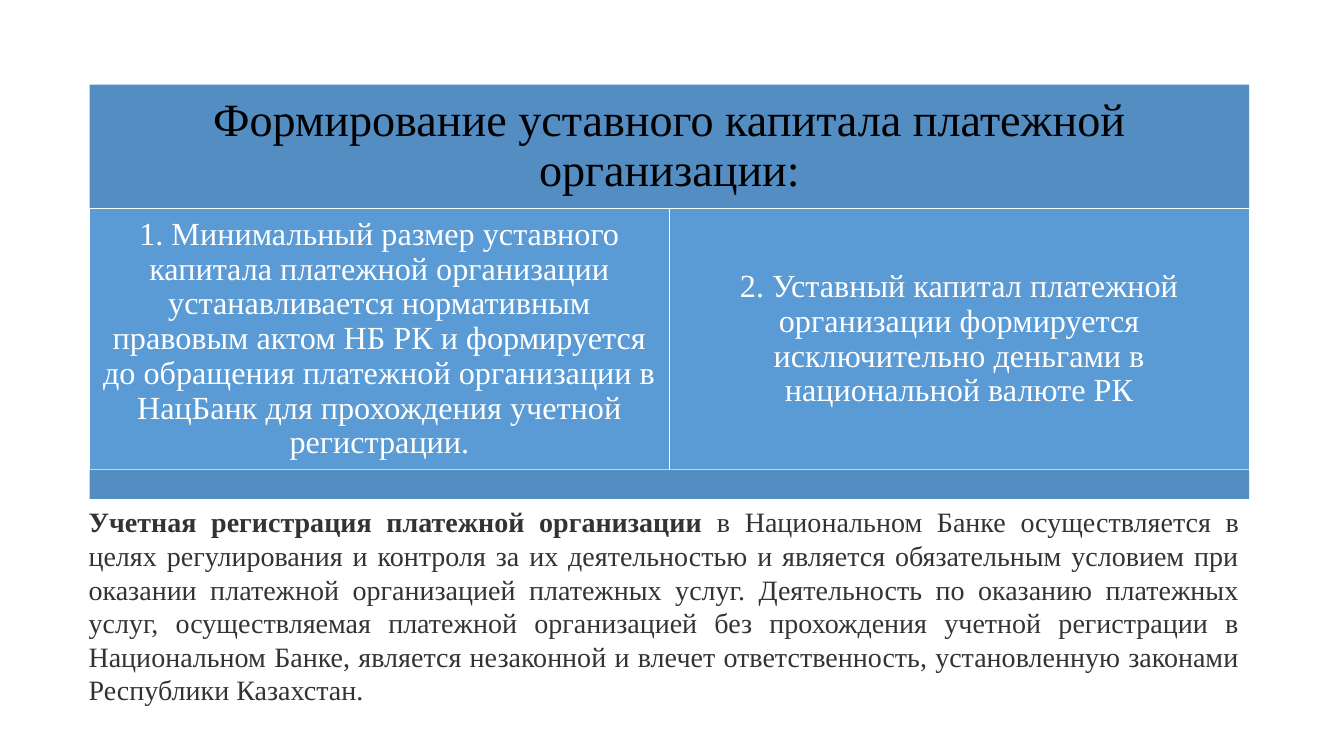
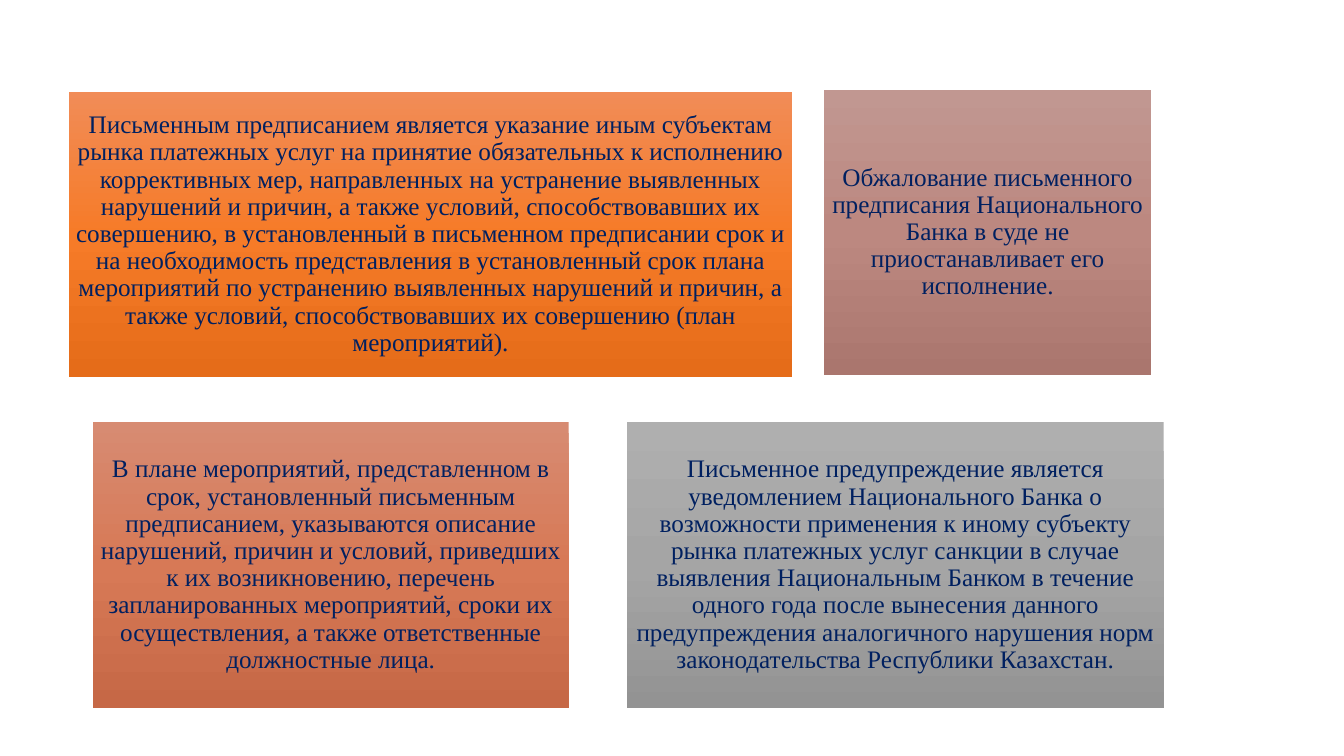
from copy import deepcopy
from dataclasses import dataclass

from pptx import Presentation
from pptx.dml.color import RGBColor
from pptx.enum.shapes import MSO_SHAPE as Preset
from pptx.enum.text import MSO_ANCHOR as Anchor, PP_ALIGN as Align
from pptx.oxml.ns import qn
from pptx.util import Inches, Pt


@dataclass(frozen=True)
class Theme:
    font: str = "Times New Roman"
    band: str = "538DC1"
    column: str = "5B9BD5"
    white: str = "FFFFFF"
    black: str = "000000"
    body: str = "333333"
    navy: str = "002060"
    title_size: int = 33
    column_size: int = 23
    body_size: int = 20
    card_size: int = 18
    tight: float = 0.9


@dataclass(frozen=True)
class Box:
    left: float
    top: float
    width: float
    height: float

    def lengths(self) -> tuple:
        return tuple(Inches(v) for v in (self.left, self.top, self.width, self.height))


@dataclass(frozen=True)
class Card:
    box: Box
    shades: tuple[str, str, str]
    text: str


THEME = Theme()

# Capital panel: a heading band, two columns and a base band
PANEL_LEFT, PANEL_TOP, PANEL_WIDTH = 0.89, 0.84, 11.5
HEADING_HEIGHT, COLUMN_HEIGHT, BASE_HEIGHT = 1.23, 2.59, 0.29
HEADING = "Формирование уставного капитала платежной организации:"
COLUMNS = (
    "1. Минимальный размер уставного капитала платежной организации устанавливается "
    "нормативным правовым актом НБ РК и формируется до обращения платежной организации "
    "в НацБанк для прохождения учетной регистрации.",
    "2. Уставный капитал платежной организации формируется исключительно деньгами "
    "в национальной валюте РК",
)
REGISTRATION_LEAD = "Учетная регистрация платежной организации"
REGISTRATION = (
    " в Национальном Банке осуществляется в целях регулирования и контроля за их "
    "деятельностью и является обязательным условием при оказании платежной организацией "
    "платежных услуг. Деятельность по оказанию платежных услуг, осуществляемая платежной "
    "организацией без прохождения учетной регистрации в Национальном Банке, является "
    "незаконной и влечет ответственность, установленную законами Республики Казахстан."
)

# Measures: four gradient cards of one height
CARD_HEIGHT, LOWER_TOP = 2.83, 4.19
CARDS = (
    Card(
        Box(0.68, 0.91, 7.18, CARD_HEIGHT), ("F18C57", "F67B28", "E56C19"),
        "Письменным предписанием является указание иным субъектам рынка платежных услуг "
        "на принятие обязательных к исполнению коррективных мер, направленных на устранение "
        "выявленных нарушений и причин, а также условий, способствовавших их совершению, "
        "в установленный в письменном предписании срок и на необходимость представления "
        "в установленный срок плана мероприятий по устранению выявленных нарушений и причин, "
        "а также условий, способствовавших их совершению (план мероприятий).",
    ),
    Card(
        Box(8.17, 0.89, 3.25, CARD_HEIGHT), ("C19791", "BC8880", "AA766E"),
        "Обжалование письменного предписания Национального Банка в суде "
        "не приостанавливает его исполнение.",
    ),
    Card(
        Box(0.92, LOWER_TOP, 4.72, CARD_HEIGHT), ("D78B72", "D77956", "C66846"),
        "В плане мероприятий, представленном в срок, установленный письменным предписанием, "
        "указываются описание нарушений, причин и условий, приведших к их возникновению, "
        "перечень запланированных мероприятий, сроки их осуществления, а также ответственные "
        "должностные лица.",
    ),
    Card(
        Box(6.22, LOWER_TOP, 5.32, CARD_HEIGHT), ("AFAFAF", "A5A5A5", "939393"),
        "Письменное предупреждение является уведомлением Национального Банка о возможности "
        "применения к иному субъекту рынка платежных услуг санкции в случае выявления "
        "Национальным Банком в течение одного года после вынесения данного предупреждения "
        "аналогичного нарушения норм законодательства Республики Казахстан.",
    ),
)


def write(shape, text: str, *, size: int, color: str, lead: str = "",
          align=Align.CENTER, anchor=Anchor.MIDDLE, spacing: float = THEME.tight,
          inset: tuple[float, float] = (0.1, 0.1)) -> None:
    """Fill a shape with one paragraph, opened by an optional bold lead."""
    frame = shape.text_frame
    frame.word_wrap = True
    frame.vertical_anchor = anchor
    frame.margin_left = frame.margin_right = Inches(inset[0])
    frame.margin_top = frame.margin_bottom = Inches(inset[1])
    paragraph = frame.paragraphs[0]
    paragraph.alignment = align
    paragraph.line_spacing = spacing
    for part, bold in ((lead, True), (text, False)):
        if part:
            run = paragraph.add_run()
            run.text = part
            run.font.name = THEME.font
            run.font.size = Pt(size)
            run.font.bold = bold
            run.font.color.rgb = RGBColor.from_string(color)


def add_block(slide, box: Box, *shades: str, line: str = ""):
    """Draw a rectangle, solid for one shade or graded downwards for three."""
    block = slide.shapes.add_shape(Preset.RECTANGLE, *box.lengths())
    block.shadow.inherit = False
    if len(shades) == 1:
        block.fill.solid()
        block.fill.fore_color.rgb = RGBColor.from_string(shades[0])
    else:
        block.fill.gradient()
        block.fill.gradient_angle = 270
        stop_list = next(block.element.spPr.iter(qn("a:gsLst")))
        stop_list.append(deepcopy(stop_list[-1]))
        for index, (stop, shade) in enumerate(zip(block.fill.gradient_stops, shades)):
            stop.position = index / (len(shades) - 1)
            stop.color.rgb = RGBColor.from_string(shade)
    if line:
        block.line.color.rgb = RGBColor.from_string(line)
        block.line.width = Pt(1)
    else:
        block.line.fill.background()
    return block


def build_capital(slide) -> None:
    # Heading band
    heading = add_block(slide, Box(PANEL_LEFT, PANEL_TOP, PANEL_WIDTH, HEADING_HEIGHT), THEME.band)
    write(heading, HEADING, size=THEME.title_size, color=THEME.black, inset=(0.14, 0.14))

    # Two equal columns
    columns_top = PANEL_TOP + HEADING_HEIGHT
    column_width = PANEL_WIDTH / len(COLUMNS)
    for index, text in enumerate(COLUMNS):
        box = Box(PANEL_LEFT + index * column_width, columns_top, column_width, COLUMN_HEIGHT)
        column = add_block(slide, box, THEME.column, line=THEME.white)
        write(column, text, size=THEME.column_size, color=THEME.white)

    # Base band
    base_top = columns_top + COLUMN_HEIGHT
    add_block(slide, Box(PANEL_LEFT, base_top, PANEL_WIDTH, BASE_HEIGHT), THEME.band)

    # Registration paragraph
    registration = slide.shapes.add_textbox(*Box(0.78, 4.96, 11.61, 2.1).lengths())
    write(registration, REGISTRATION, lead=REGISTRATION_LEAD, size=THEME.body_size,
          color=THEME.body, align=Align.JUSTIFY, anchor=Anchor.TOP, spacing=1.0,
          inset=(0.1, 0.05))


def build_measures(slide) -> None:
    for card in CARDS:
        block = add_block(slide, card.box, *card.shades)
        write(block, card.text, size=THEME.card_size, color=THEME.navy, inset=(0.07, 0.07))


def main() -> None:
    deck = Presentation()
    deck.slide_width, deck.slide_height = Inches(13.33), Inches(7.5)
    blank = deck.slide_layouts[6]
    for build in (build_capital, build_measures):
        build(deck.slides.add_slide(blank))
    deck.save("out.pptx")


if __name__ == "__main__":
    main()
